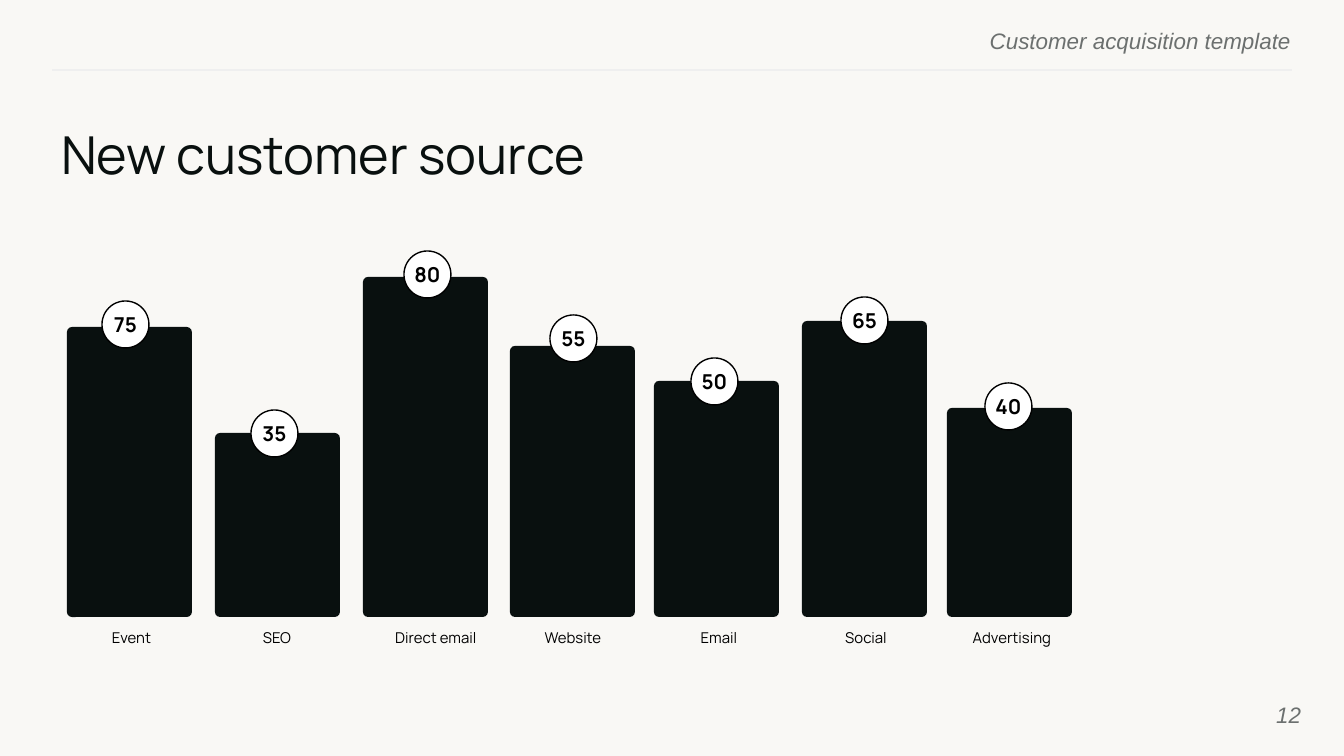
from dataclasses import dataclass

import pptx
import pptx.dml.color
import pptx.enum.shapes
import pptx.enum.text
import pptx.oxml
import pptx.oxml.ns
import pptx.util
from pptx.enum.shapes import MSO_SHAPE
from pptx.enum.text import MSO_ANCHOR, PP_ALIGN

EMU_PER_PX = 914400 / 134.4


@dataclass(frozen=True)
class Theme:
    background: str = "F9F8F5"
    ink: str = "09100F"
    black: str = "000000"
    white: str = "FFFFFF"
    muted: str = "6C706F"
    rule: str = "EFEFEF"
    heading_font: str = "Manrope"
    margin_font: str = "Arial"
    title_size: int = 28
    margin_size: int = 12
    badge_size: int = 11
    label_size: int = 8
    line_width: float = 0.75


@dataclass(frozen=True)
class Box:
    left: int
    top: int
    width: int
    height: int

    def emu(self) -> tuple:
        return tuple(px(side) for side in (self.left, self.top, self.width, self.height))


@dataclass(frozen=True)
class Source:
    name: str
    customers: int
    bar_left: int
    bar_top: int
    badge_left: int
    badge_top: int
    label_left: int
    label_width: int


THEME = Theme()
BAR_WIDTH = 125
BASELINE = 617
BADGE_DIAMETER = 47
LABEL_TOP = 624
LABEL_HEIGHT = 27

SOURCES = [
    Source("Event", 75, 67, 327, 102, 301, 69, 125),
    Source("SEO", 35, 215, 433, 251, 410, 215, 124),
    Source("Direct email", 80, 363, 277, 404, 251, 367, 138),
    Source("Website", 55, 510, 346, 550, 315, 517, 112),
    Source("Email", 50, 654, 381, 691, 358, 663, 112),
    Source("Social", 65, 802, 321, 841, 297, 810, 112),
    Source("Advertising", 40, 947, 408, 985, 383, 950, 124),
]


def px(length: int) -> int:
    return pptx.util.Emu(round(length * EMU_PER_PX))


def rgb(color: str) -> pptx.dml.color.RGBColor:
    return pptx.dml.color.RGBColor.from_string(color)


def write(shape, text: str, size: int, font: str, color: str, align=PP_ALIGN.LEFT,
          anchor=MSO_ANCHOR.MIDDLE, bold: bool = False, italic: bool = False):
    """Set one paragraph in a frame without insets and return it."""
    frame = shape.text_frame
    frame.word_wrap = True
    frame.auto_size = pptx.enum.text.MSO_AUTO_SIZE.NONE
    frame.vertical_anchor = anchor
    frame.margin_left = frame.margin_top = frame.margin_right = frame.margin_bottom = 0
    frame.text = text
    paragraph = frame.paragraphs[0]
    paragraph.alignment = align
    paragraph.font.size = pptx.util.Pt(size)
    paragraph.font.name = font
    paragraph.font.bold = bold
    paragraph.font.italic = italic
    paragraph.font.color.rgb = rgb(color)
    return paragraph


def add_shape(slide, kind, box: Box, fill: str | None = None, line: str | None = None):
    shape = slide.shapes.add_shape(kind, *box.emu())
    shape.shadow.inherit = False
    if fill:
        shape.fill.solid()
        shape.fill.fore_color.rgb = rgb(fill)
    else:
        shape.fill.background()
    if line:
        shape.line.color.rgb = rgb(line)
        shape.line.width = pptx.util.Pt(THEME.line_width)
    else:
        shape.line.fill.background()
    return shape


def add_margin_text(slide, text: str, box: Box, anchor) -> None:
    write(slide.shapes.add_textbox(*box.emu()), text, THEME.margin_size, THEME.margin_font,
          THEME.muted, PP_ALIGN.RIGHT, anchor, italic=True)


def add_header_rule(slide) -> None:
    rule = slide.shapes.add_connector(pptx.enum.shapes.MSO_CONNECTOR.STRAIGHT,
                                      px(1292), px(70), px(52), px(70))
    rule.line.color.rgb = rgb(THEME.rule)
    rule.line.width = pptx.util.Pt(THEME.line_width)
    properties = rule._element.spPr
    properties.append(pptx.oxml.parse_xml(f"<a:effectLst {pptx.oxml.ns.nsdecls('a')}/>"))


def add_title(slide, text: str) -> None:
    title = slide.shapes.title
    title.left, title.top, title.width, title.height = Box(61, 122, 1240, 69).emu()
    paragraph = write(title, text, THEME.title_size, THEME.heading_font, THEME.ink,
                      anchor=MSO_ANCHOR.TOP)
    paragraph.space_after = pptx.util.Pt(10)


def add_label(slide, source: Source) -> None:
    box = Box(source.label_left, LABEL_TOP, source.label_width, LABEL_HEIGHT)
    label = add_shape(slide, MSO_SHAPE.ROUNDED_RECTANGLE, box)
    write(label, source.name, THEME.label_size, THEME.heading_font, THEME.black,
          PP_ALIGN.CENTER)


def add_bar(slide, source: Source) -> None:
    box = Box(source.bar_left, source.bar_top, BAR_WIDTH, BASELINE - source.bar_top)
    bar = add_shape(slide, MSO_SHAPE.ROUNDED_RECTANGLE, box, THEME.ink)
    bar.adjustments[0] = 0.04


def add_badge(slide, source: Source) -> None:
    box = Box(source.badge_left, source.badge_top, BADGE_DIAMETER, BADGE_DIAMETER)
    badge = add_shape(slide, MSO_SHAPE.OVAL, box, THEME.white, THEME.black)
    write(badge, str(source.customers), THEME.badge_size, THEME.heading_font, THEME.black,
          PP_ALIGN.CENTER, bold=True)


def main() -> None:
    presentation = pptx.Presentation()
    presentation.slide_width, presentation.slide_height = px(1344), px(756)
    slide = presentation.slides.add_slide(presentation.slide_layouts.get_by_name("Title Only"))
    slide.background.fill.solid()
    slide.background.fill.fore_color.rgb = rgb(THEME.background)

    add_margin_text(slide, "Customer acquisition template", Box(774, 27, 517, 24),
                    MSO_ANCHOR.TOP)
    add_header_rule(slide)
    add_title(slide, "New customer source")
    add_margin_text(slide, "12", Box(1220, 686, 81, 58), MSO_ANCHOR.MIDDLE)

    for add_part in (add_label, add_bar, add_badge):
        for source in SOURCES:
            add_part(slide, source)

    presentation.save("out.pptx")


if __name__ == "__main__":
    main()
